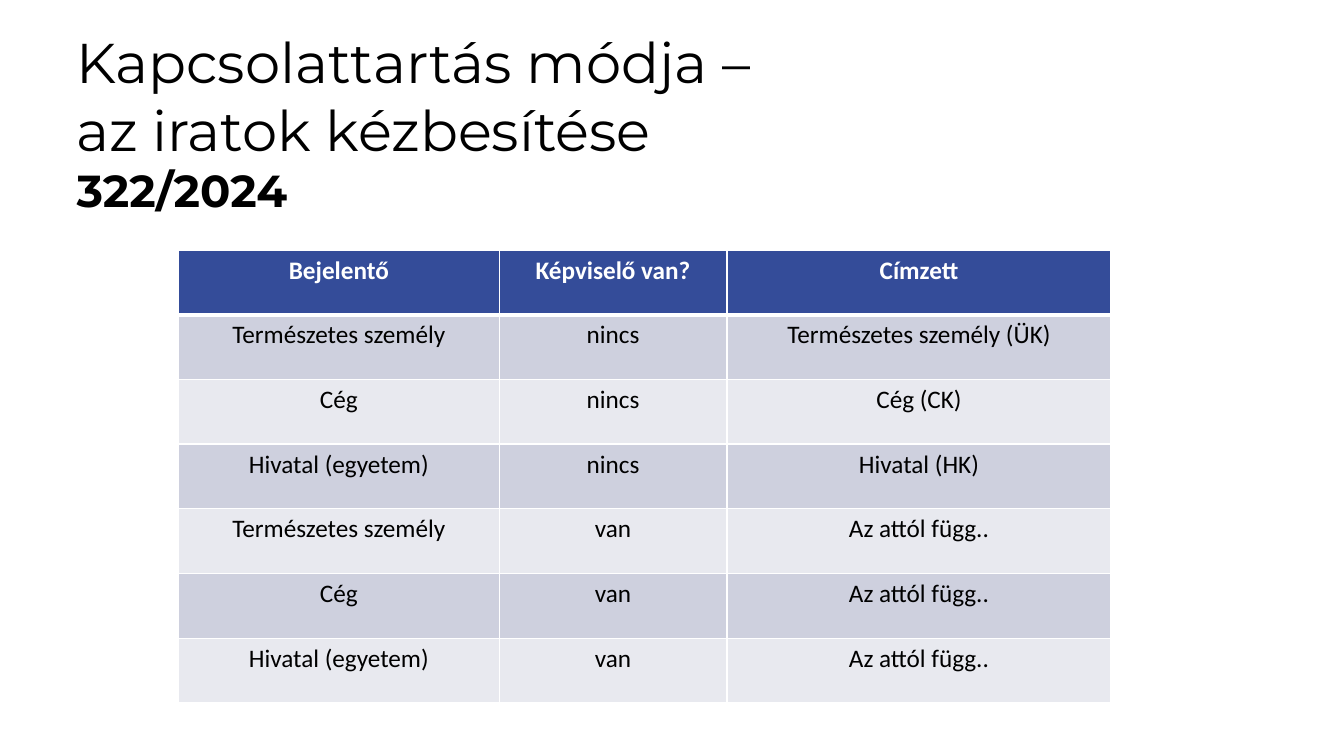
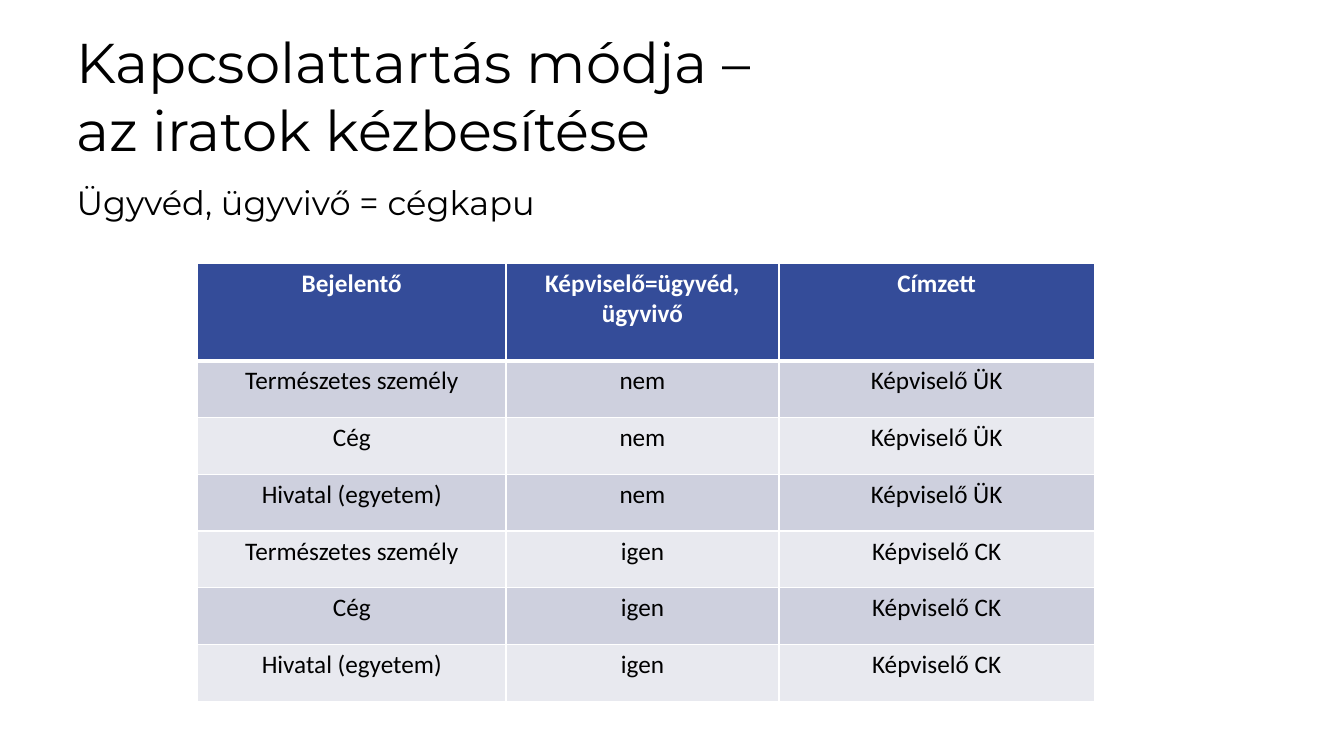
"""Build two slides on how documents are delivered to applicants and their representatives."""
from lxml.etree import SubElement
from pptx import Presentation
from pptx.dml.color import RGBColor
from pptx.enum.text import PP_ALIGN
from pptx.oxml.ns import qn
from pptx.util import Cm, Pt

BLACK = RGBColor(0x00, 0x00, 0x00)
WHITE = RGBColor(0xFF, 0xFF, 0xFF)
HEADER_BLUE = RGBColor(0x34, 0x4C, 0x99)
BAND_DARK = RGBColor(0xCE, 0xD0, 0xDE)
BAND_LIGHT = RGBColor(0xE8, 0xE9, 0xEF)
TITLE = [("Kapcsolattartás módja –", 40, False), ("az iratok kézbesítése", 40, False)]
APPLICANTS = ["Természetes személy", "Cég", "Hivatal (egyetem)"] * 2


def add_heading(slide, top, width, height, lines):
    frame = slide.shapes.add_textbox(Cm(1.68), Cm(top), Cm(width), Cm(height)).text_frame
    frame.word_wrap = True
    frame.text = "\n".join(text for text, _, _ in lines)
    for paragraph, (_, size, bold) in zip(frame.paragraphs, lines):
        font = paragraph.runs[0].font
        font.name, font.size, font.bold = "Montserrat", Pt(size), bold
        font.color.rgb = BLACK


def add_delivery_table(slide, left, top, widths, header_height, row_height, header, answers, addressees):
    rows = [header, *zip(APPLICANTS, answers, addressees)]
    heights = [header_height] + [row_height] * len(APPLICANTS)
    table = slide.shapes.add_table(len(rows), len(widths), Cm(left), Cm(top),
                                   Cm(sum(widths)), Cm(sum(heights))).table
    for column, width in zip(table.columns, widths):
        column.width = Cm(width)
    for r, (texts, height) in enumerate(zip(rows, heights)):
        table.rows[r].height = Cm(height)
        is_header = r == 0
        fill = HEADER_BLUE if is_header else BAND_DARK if r % 2 else BAND_LIGHT
        edges = {"lnL": 1, "lnR": 1, "lnT": 3 if r == 1 else 1, "lnB": 3 if is_header else 1}
        for c, text in enumerate(texts):
            cell = table.cell(r, c)
            properties = cell._tc.get_or_add_tcPr()
            for edge, points in edges.items():
                line = SubElement(properties, qn(f"a:{edge}"), w=str(Pt(points)))
                SubElement(SubElement(line, qn("a:solidFill")), qn("a:srgbClr"), val=str(WHITE))
            cell.fill.solid()
            cell.fill.fore_color.rgb = fill
            cell.text_frame.text = text
            paragraph = cell.text_frame.paragraphs[0]
            paragraph.alignment = PP_ALIGN.CENTER
            font = paragraph.runs[0].font
            font.name, font.size, font.bold = "Calibri", Pt(18), is_header
            font.color.rgb = WHITE if is_header else BLACK


deck = Presentation()
deck.slide_width, deck.slide_height = Cm(33.87), Cm(19.05)
blank = deck.slide_layouts[6]

general = deck.slides.add_slide(blank)
add_delivery_table(general, 4.5, 6.3, [8.08, 5.74, 9.68], 1.63, 1.63,
                   ["Bejelentő", "Képviselő van?", "Címzett"],
                   ["nincs"] * 3 + ["van"] * 3,
                   ["Természetes személy (ÜK)", "Cég (CK)", "Hivatal (HK)"] + ["Az attól függ.."] * 3)
add_heading(general, 0.58, 18.29, 5.05, TITLE + [("322/2024", 32, True)])

attorney = deck.slides.add_slide(blank)
add_delivery_table(attorney, 4.98, 6.63, [7.77, 6.88, 7.95], 2.46, 1.43,
                   ["Bejelentő", "Képviselő=ügyvéd, ügyvivő", "Címzett"],
                   ["nem"] * 3 + ["igen"] * 3,
                   ["Képviselő ÜK"] * 3 + ["Képviselő CK"] * 3)
add_heading(attorney, 0.58, 18.29, 3.7, TITLE)
add_heading(attorney, 4.47, 12.42, 1.27, [("Ügyvéd, ügyvivő = cégkapu", 24, False)])

deck.save("out.pptx")
